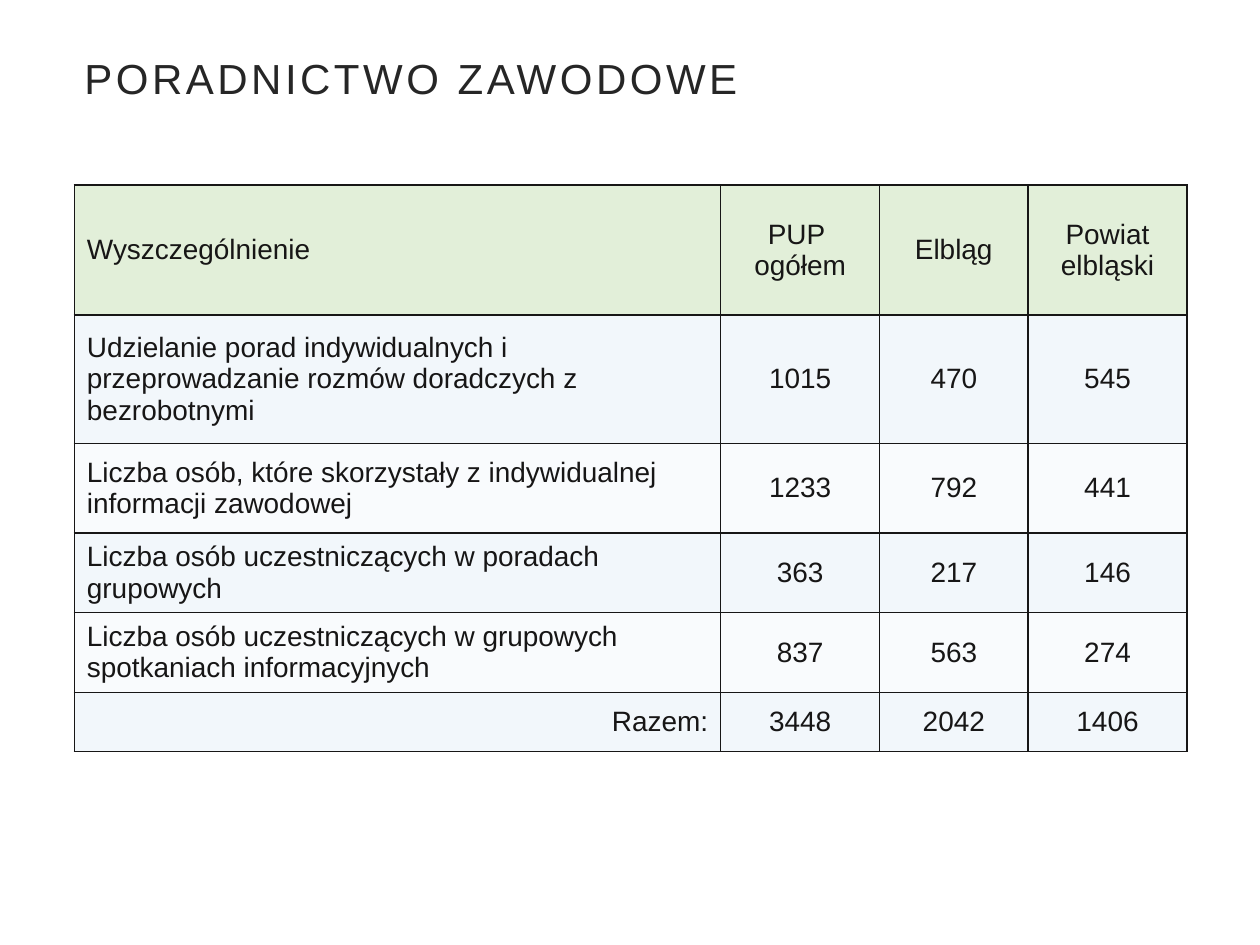
from lxml.etree import SubElement
from pptx import Presentation
from pptx.dml.color import RGBColor
from pptx.enum.text import MSO_ANCHOR, PP_ALIGN
from pptx.oxml.ns import qn
from pptx.util import Inches, Pt

TITLE = "PORADNICTWO ZAWODOWE"
ROWS = [
    ("Wyszczególnienie", "PUP \nogółem", "Elbląg", "Powiat elbląski"),
    ("Udzielanie porad indywidualnych i przeprowadzanie rozmów doradczych z bezrobotnymi",
     "1015", "470", "545"),
    ("Liczba osób, które skorzystały z indywidualnej informacji zawodowej",
     "1233", "792", "441"),
    ("Liczba osób uczestniczących w poradach grupowych", "363", "217", "146"),
    ("Liczba osób uczestniczących w grupowych spotkaniach informacyjnych",
     "837", "563", "274"),
    ("Razem:", "3448", "2042", "1406"),
]
COLUMN_WIDTHS = [5.13, 1.26, 1.18, 1.26]
ROW_HEIGHTS = [1.03, 1.02, 0.71, 0.59, 0.59, 0.47]
COLORS = {
    "title": "262626",
    "ink": "171616",
    "header": "E2EFD9",
    "odd": "F2F7FB",
    "even": "F9FBFD",
}
FONT = "Arial"


def style_paragraph(paragraph, size, color):
    for span in paragraph.runs:
        span.font.name = FONT
        span.font.size = Pt(size)
        span.font.bold = False
        span.font.color.rgb = RGBColor.from_string(COLORS[color])


def add_borders(cell):
    properties = cell._tc.get_or_add_tcPr()
    for side in ("lnL", "lnR", "lnT", "lnB"):
        line = SubElement(properties, qn(f"a:{side}"), w=str(Pt(1)))
        fill = SubElement(line, qn("a:solidFill"))
        SubElement(fill, qn("a:srgbClr"), val=COLORS["ink"])


def add_title(page):
    box = page.shapes.add_textbox(Inches(0.28), Inches(0.21), Inches(9.37), Inches(0.87))
    frame = box.text_frame
    frame.word_wrap = True
    frame.vertical_anchor = MSO_ANCHOR.MIDDLE
    frame.margin_left = frame.margin_right = Inches(0.2)
    frame.margin_top = frame.margin_bottom = Inches(0.2)
    frame.text = TITLE
    paragraph = frame.paragraphs[0]
    paragraph.line_spacing = 0.9
    paragraph._p.get_or_add_pPr().set("marL", str(Inches(0.19)))
    style_paragraph(paragraph, 24, "title")
    paragraph.runs[0].font._element.set("spc", "200")


def fill_cell(cell, text, row, column):
    add_borders(cell)
    band = "header" if row == 0 else "odd" if row % 2 else "even"
    cell.fill.solid()
    cell.fill.fore_color.rgb = RGBColor.from_string(COLORS[band])
    cell.vertical_anchor = MSO_ANCHOR.MIDDLE
    cell.text_frame.text = text
    if column > 0:
        alignment = PP_ALIGN.CENTER
    else:
        alignment = PP_ALIGN.RIGHT if row == len(ROWS) - 1 else PP_ALIGN.LEFT
    for paragraph in cell.text_frame.paragraphs:
        paragraph.alignment = alignment
        style_paragraph(paragraph, 16, "ink")


def add_summary_table(page):
    table = page.shapes.add_table(
        len(ROWS), len(COLUMN_WIDTHS), Inches(0.59), Inches(1.47),
        Inches(sum(COLUMN_WIDTHS)), Inches(sum(ROW_HEIGHTS))).table
    for column, width in zip(table.columns, COLUMN_WIDTHS):
        column.width = Inches(width)
    for row, height in zip(table.rows, ROW_HEIGHTS):
        row.height = Inches(height)
    for row, texts in enumerate(ROWS):
        for column, text in enumerate(texts):
            fill_cell(table.cell(row, column), text, row, column)


def main():
    deck = Presentation()
    deck.slide_width = Inches(10)
    deck.slide_height = Inches(7.5)
    page = deck.slides.add_slide(deck.slide_layouts[6])
    add_title(page)
    add_summary_table(page)
    deck.save("out.pptx")


if __name__ == "__main__":
    main()
